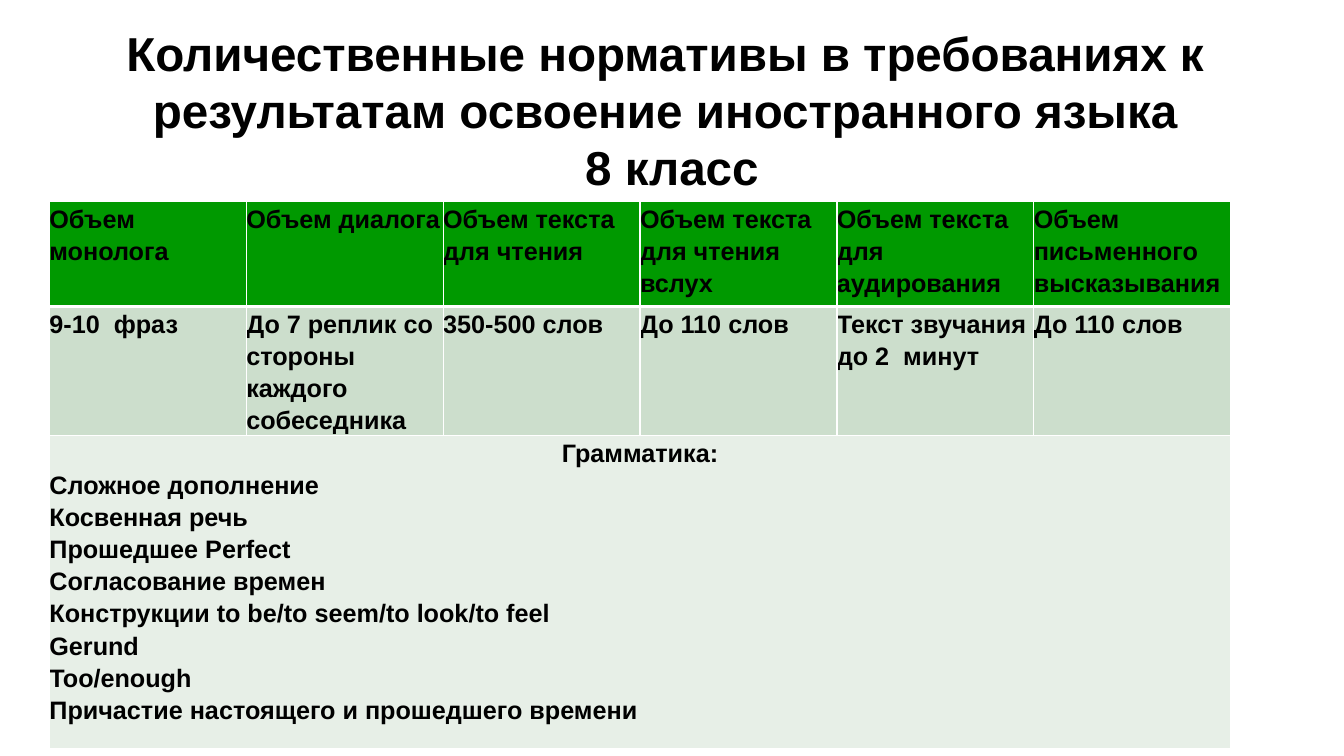
import pptx
import pptx.util
import pptx.dml.color
import pptx.enum.text
from dataclasses import dataclass
from lxml import etree

Pt = pptx.util.Pt
RGB = pptx.dml.color.RGBColor.from_string
ALIGN = pptx.enum.text.PP_ALIGN


@dataclass(frozen=True)
class Theme:
    font: str = "Arial"
    text: str = "000000"
    line: str = "FFFFFF"
    header: str = "009900"
    norms: str = "CCDECC"
    grammar: str = "E7EFE7"
    title_size: float = 34
    body_size: float = 18


theme = Theme()
COLUMNS = [
    ("Объем монолога", "9-10  фраз"),
    ("Объем диалога", "До 7 реплик со стороны каждого собеседника"),
    ("Объем текста для чтения", "350-500 слов"),
    ("Объем текста для чтения вслух", "До 110 слов"),
    ("Объем текста для аудирования", "Текст звучания до 2  минут"),
    ("Объем письменного высказывания", "До 110 слов"),
]
GRAMMAR = [
    "Грамматика:",
    "Сложное дополнение",
    "Косвенная речь",
    "Прошедшее Perfect",
    "Согласование времен",
    "Конструкции to be/to seem/to look/to feel",
    "Gerund",
    "Too/enough ",
    "Причастие настоящего и прошедшего времени",
]


def format_text(tf, size):
    for p in tf.paragraphs:
        for r in p.runs:
            r.font.name = theme.font
            r.font.size = Pt(size)
            r.font.bold = True
            r.font.color.rgb = RGB(theme.text)


def set_borders(cell, bottom):
    """Draw 1 pt lines round a cell, with the bottom one as wide as given."""
    tcPr = cell._tc.get_or_add_tcPr()
    ns = "{http://schemas.openxmlformats.org/drawingml/2006/main}"
    for side, width in (("L", 1), ("R", 1), ("T", 1), ("B", bottom)):
        ln = etree.SubElement(tcPr, f"{ns}ln{side}", w=str(Pt(width)))
        fill = etree.SubElement(ln, f"{ns}solidFill")
        etree.SubElement(fill, f"{ns}srgbClr", val=theme.line)


prs = pptx.Presentation()
prs.slide_width, prs.slide_height = Pt(960), Pt(540)
s = prs.slides.add_slide(prs.slide_layouts[5])

# Title
title = s.shapes.title
title.left, title.top, title.width, title.height = Pt(48), Pt(15), Pt(864), Pt(126)
tf = title.text_frame
tf.text = ("Количественные нормативы в требованиях к \v"
           "результатам освоение иностранного языка \v8 класс")
tf.word_wrap = True
tf.auto_size = pptx.enum.text.MSO_AUTO_SIZE.NONE
tf.vertical_anchor = pptx.enum.text.MSO_ANCHOR.MIDDLE
tf.paragraphs[0].alignment = ALIGN.CENTER
format_text(tf, theme.title_size)

# Table of norms with a merged grammar row
row_heights = (75, 92, 224)
row_fills = (theme.header, theme.norms, theme.grammar)
col_width = 140.64
table = s.shapes.add_table(
    len(row_heights), len(COLUMNS), Pt(35.28), Pt(144),
    Pt(col_width * len(COLUMNS)), Pt(sum(row_heights))).table
for col in table.columns:
    col.width = Pt(col_width)
for row, height in zip(table.rows, row_heights):
    row.height = Pt(height)

for c, texts in enumerate(COLUMNS):
    for r, text in enumerate(texts):
        table.cell(r, c).text = text
grammar = table.cell(2, 0)
grammar.merge(table.cell(2, len(COLUMNS) - 1))
grammar.text = "\n".join(GRAMMAR)
for p in grammar.text_frame.paragraphs:
    p.alignment = ALIGN.JUSTIFY
grammar.text_frame.paragraphs[0].alignment = ALIGN.CENTER

for r, row in enumerate(table.rows):
    for cell in row.cells:
        cell.margin_left = cell.margin_right = Pt(0)
        cell.margin_top = cell.margin_bottom = Pt(0)
        set_borders(cell, 3 if r == 0 else 1)
        cell.fill.solid()
        cell.fill.fore_color.rgb = RGB(row_fills[r])
        for p in cell.text_frame.paragraphs:
            p.line_spacing = 1.14
        format_text(cell.text_frame, theme.body_size)

prs.save("out.pptx")
